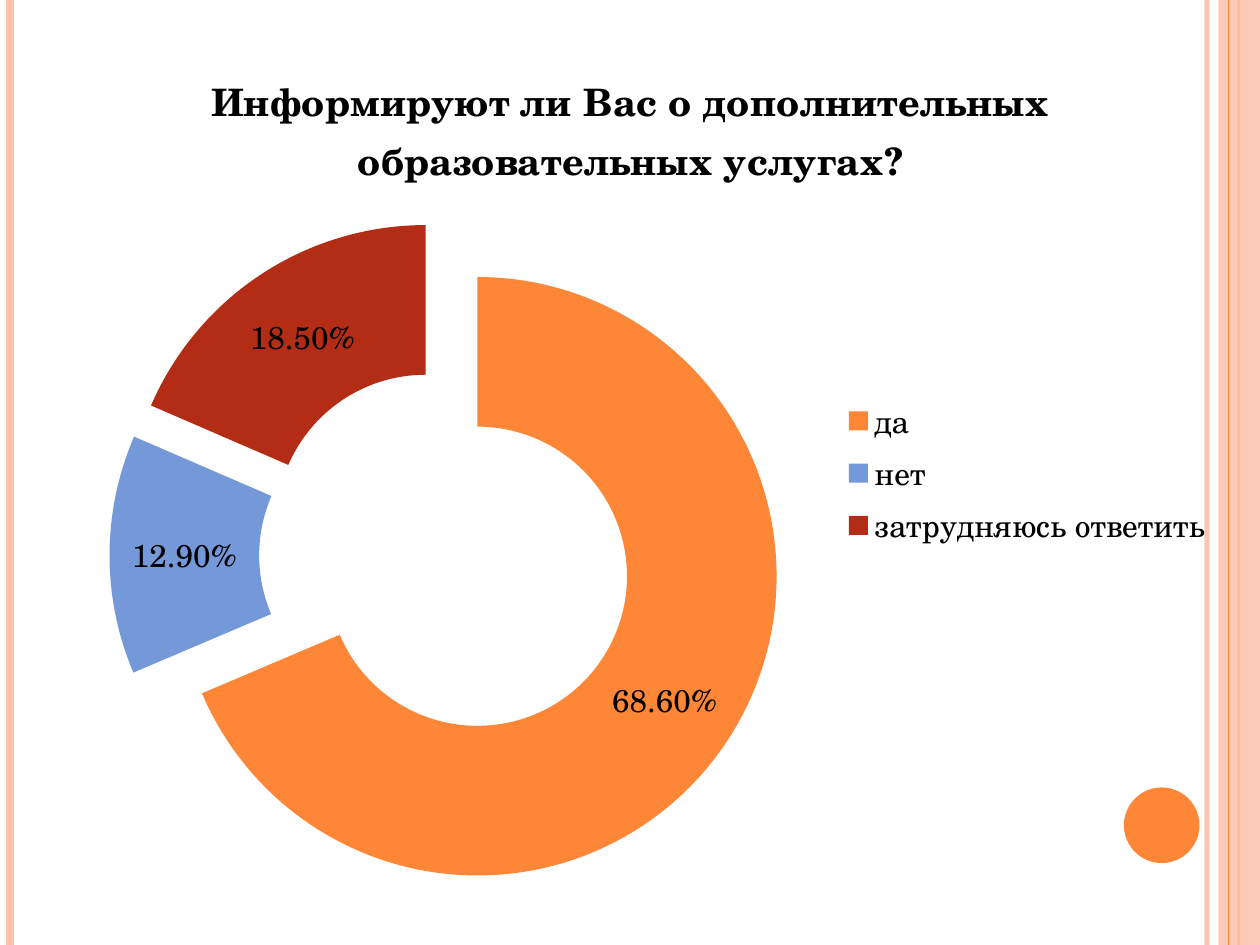
from dataclasses import dataclass

from lxml.etree import SubElement
from pptx import Presentation
from pptx.chart.data import CategoryChartData
from pptx.dml.color import RGBColor
from pptx.enum.chart import XL_CHART_TYPE, XL_LEGEND_POSITION
from pptx.enum.shapes import MSO_CONNECTOR, MSO_SHAPE
from pptx.oxml import parse_xml
from pptx.oxml.ns import nsdecls, qn
from pptx.util import Inches, Pt


@dataclass(frozen=True)
class Theme:
    font: str = "TeX Gyre Schola"
    text: RGBColor = RGBColor.from_string("000000")
    orange: RGBColor = RGBColor.from_string("FE8637")
    blue: RGBColor = RGBColor.from_string("7598D9")
    red: RGBColor = RGBColor.from_string("B32C16")
    pale: RGBColor = RGBColor.from_string("FEC3AE")
    body_size: Pt = Pt(18)
    title_size: Pt = Pt(21.6)


theme = Theme()


def set_opacity(fill, percent):
    color = fill._xPr.find(".//" + qn("a:srgbClr"))
    SubElement(color, qn("a:alpha")).set("val", str(percent * 1000))


def add_stripe(x, color, width, opacity=100):
    """Draw a full-height vertical line."""
    stripe = slide.shapes.add_connector(
        MSO_CONNECTOR.STRAIGHT, Inches(x), 0, Inches(x), prs.slide_height
    )
    stripe.line.color.rgb = color
    stripe.line.width = Pt(width)
    if opacity < 100:
        set_opacity(stripe.line.fill, opacity)
    SubElement(stripe._element.spPr, qn("a:effectLst"))


prs = Presentation()
prs.slide_width, prs.slide_height = Inches(10), Inches(7.5)
slide = prs.slides.add_slide(prs.slide_layouts[6])

# Side decoration
add_stripe(9.58, theme.pale, 3, 93)
add_stripe(0.08, theme.pale, 4.5)
add_stripe(9.83, theme.orange, 1.5)

band = slide.shapes.add_shape(
    MSO_SHAPE.RECTANGLE, Inches(9.67), 0, Inches(0.33), prs.slide_height
)
band.fill.solid()
band.fill.fore_color.rgb = theme.pale
set_opacity(band.fill, 87)

add_stripe(9.75, theme.orange, 0.75)

dot = slide.shapes.add_shape(
    MSO_SHAPE.OVAL, Inches(8.92), Inches(6.25), Inches(0.6), Inches(0.6)
)
dot.fill.solid()
dot.fill.fore_color.rgb = theme.orange

for decoration in (band, dot):
    decoration.line.fill.background()
    decoration.shadow.inherit = False

# Survey answers
question = "Информируют ли Вас о дополнительных образовательных услугах?"
answers = [
    ("да", 0.686, theme.orange),
    ("нет", 0.129, theme.blue),
    ("затрудняюсь ответить", 0.185, theme.red),
]
survey = CategoryChartData(number_format="0.00%")
survey.categories = [answer for answer, _, _ in answers]
survey.add_series(question, [share for _, share, _ in answers])

chart = slide.shapes.add_chart(
    XL_CHART_TYPE.DOUGHNUT_EXPLODED,
    Inches(0.28), Inches(0.29), Inches(9.45), Inches(6.93), survey,
).chart
chart.font.name = theme.font
chart.font.size = theme.body_size
chart.font.color.rgb = theme.text

chart.has_title = True
chart.chart_title.include_in_layout = False
chart.chart_title.text_frame.text = question
title_font = chart.chart_title.text_frame.paragraphs[0].font
title_font.name = theme.font
title_font.size = theme.title_size
title_font.bold = True
title_font.color.rgb = theme.text

chart.has_legend = True
chart.legend.position = XL_LEGEND_POSITION.RIGHT
chart.legend.include_in_layout = False

shares = chart.plots[0].series[0]
for index, (_, _, color) in enumerate(answers):
    slice_format = shares.points[index].format
    slice_format.fill.solid()
    slice_format.fill.fore_color.rgb = color
    slice_format.line.fill.background()

labels = shares.data_labels
labels.show_value = True
labels.show_percentage = False
labels.number_format = "0.00%"
labels.number_format_is_linked = False

ring = shares._element
for old_explosion in ring.findall(qn("c:explosion")):
    ring.remove(old_explosion)
ring.find(qn("c:dPt")).addprevious(
    parse_xml(f'<c:explosion {nsdecls("c")} val="25"/>')
)

prs.save("out.pptx")
